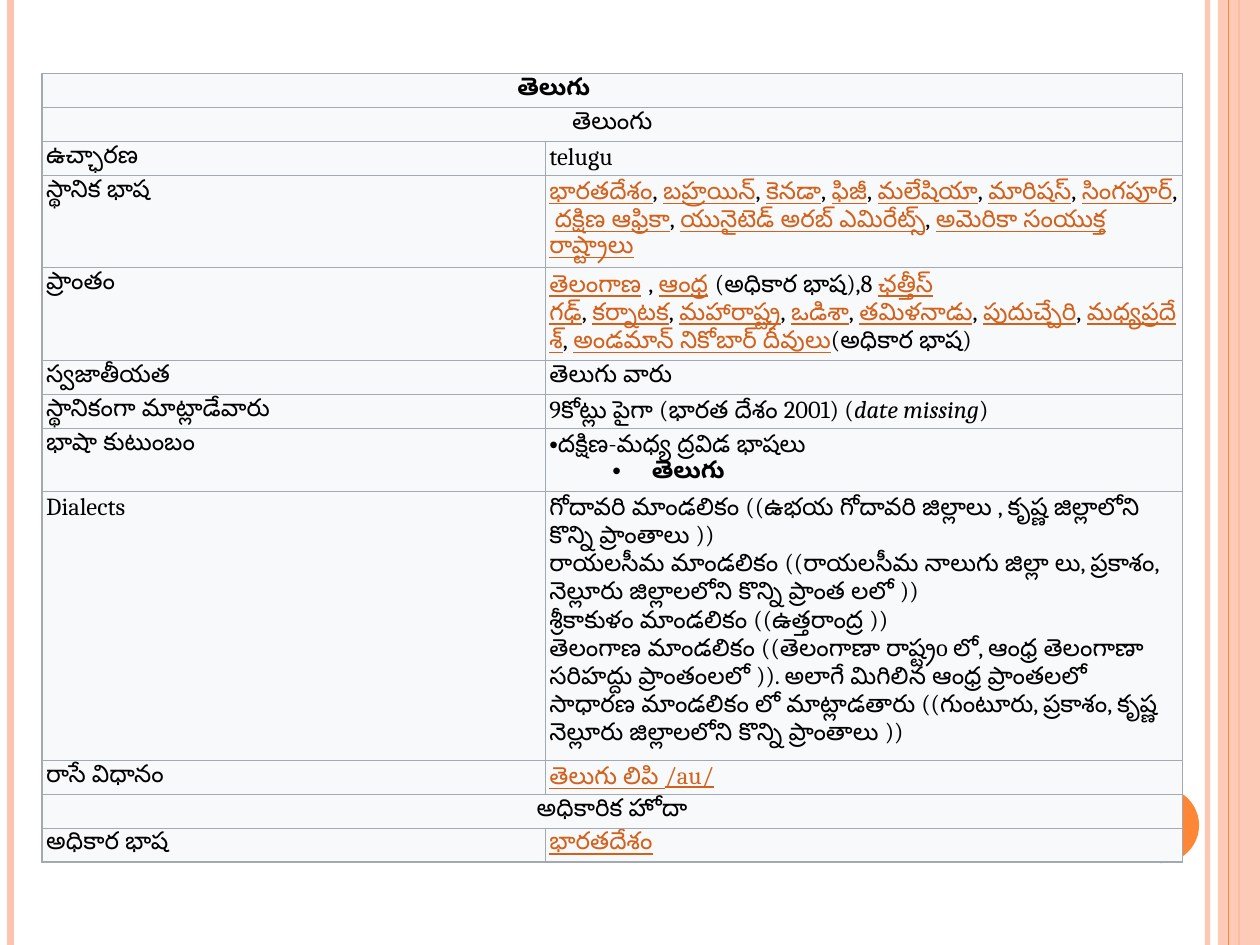
import pptx
import pptx.dml.color
import pptx.enum.shapes
import pptx.enum.text
import pptx.oxml
import pptx.oxml.ns
import pptx.util
from lxml import etree

Pt = pptx.util.Pt
qn = pptx.oxml.ns.qn
NO_BREAK_SPACE = chr(160)


def color(value):
    return pptx.dml.color.RGBColor.from_string(value)


def add_alpha(fill_parent, percent):
    for element in fill_parent.iter(qn("a:srgbClr")):
        etree.SubElement(element, qn("a:alpha")).set("val", str(percent * 1000))


class SlideBuilder:
    font = "Cambria"
    size = 14
    text = "000000"
    link = "D2611C"
    cell_fill = "F8F9FA"
    border = "A2A9B1"
    accent = "FE8637"
    pale = "FEC3AE"

    def __init__(self, presentation):
        self.slide = presentation.slides.add_slide(presentation.slide_layouts[6])

    def vertical_line(self, x, line_color, width, alpha=100):
        line = self.slide.shapes.add_connector(
            pptx.enum.shapes.MSO_CONNECTOR.STRAIGHT, Pt(x), Pt(0), Pt(x), Pt(540))
        line.line.color.rgb = color(line_color)
        line.line.width = Pt(width)
        properties = line._element.spPr
        if alpha < 100:
            add_alpha(properties, alpha)
        etree.SubElement(properties, qn("a:effectLst"))

    def shape(self, kind, left, top, width, height, fill, alpha=100):
        shape = self.slide.shapes.add_shape(
            kind, Pt(left), Pt(top), Pt(width), Pt(height))
        shape.shadow.inherit = False
        shape.fill.solid()
        shape.fill.fore_color.rgb = color(fill)
        shape.line.fill.background()
        if alpha < 100:
            add_alpha(shape._element.spPr, alpha)

    def table(self, left, top, width, height, columns, rows):
        frame = self.slide.shapes.add_table(
            len(rows), len(columns), Pt(left), Pt(top), Pt(width), Pt(height))
        table = frame.table
        table.first_row = False
        table.horz_banding = False
        for column, column_width in zip(table.columns, columns):
            column.width = Pt(column_width)
        for row, (row_height, *_) in zip(table.rows, rows):
            row.height = Pt(row_height)
        for cell in table.iter_cells():
            self.style_cell(cell)
        for index, (_, *texts) in enumerate(rows):
            if len(texts) == 1:
                table.cell(index, 0).merge(table.cell(index, 1))
            for column, content in enumerate(texts):
                paragraphs = content if isinstance(content, list) else [content]
                self.fill_cell(table.cell(index, column), paragraphs, len(texts) == 1)
        return table

    def style_cell(self, cell):
        cell.margin_left = cell.margin_right = Pt(2.4)
        cell.margin_top = cell.margin_bottom = Pt(1.2)
        cell.fill.solid()
        cell.fill.fore_color.rgb = color(self.cell_fill)
        properties = cell._tc.tcPr
        for position, side in enumerate(("lnL", "lnR", "lnT", "lnB")):
            properties.insert(position, pptx.oxml.parse_xml(
                f'<a:{side} {pptx.oxml.ns.nsdecls("a")} w="{Pt(0.75)}"><a:solidFill>'
                f'<a:srgbClr val="{self.border}"/></a:solidFill></a:{side}>'))

    def fill_cell(self, cell, paragraphs, centered):
        """|link|, _italic_ and ~ for a no-break space."""
        frame = cell.text_frame
        for index, text in enumerate(paragraphs):
            paragraph = frame.add_paragraph() if index else frame.paragraphs[0]
            paragraph.font.name = self.font
            paragraph.font.size = Pt(self.size)
            if centered:
                paragraph.alignment = pptx.enum.text.PP_ALIGN.CENTER
            for link_index, link_piece in enumerate(text.split("|")):
                is_link = link_index % 2 == 1
                for piece_index, piece in enumerate(link_piece.split("_")):
                    if not piece:
                        continue
                    run = paragraph.add_run()
                    run.text = piece.replace("~", NO_BREAK_SPACE)
                    run.font.color.rgb = color(self.link if is_link else self.text)
                    if is_link:
                        run.font.underline = True
                    if piece_index % 2:
                        run.font.italic = True

    def bullet(self, paragraph, left=0, indent=0):
        properties = paragraph._p.get_or_add_pPr()
        properties.set("marL", str(Pt(left)))
        properties.set("indent", str(Pt(indent)))
        typeface = etree.Element(qn("a:buFont"))
        typeface.set("typeface", "Arial")
        mark = etree.Element(qn("a:buChar"))
        mark.set("char", "•")
        properties.insert(0, typeface)
        properties.insert(1, mark)


def links(names):
    return ",~".join(f"|{name}|" for name in names)


COUNTRIES = ["భారతదేశం", "బహ్రయిన్", "కెనడా", "ఫిజీ", "మలేషియా", "మారిషస్", "సింగపూర్",
             "దక్షిణ ఆఫ్రికా", "యునైటెడ్ అరబ్ ఎమిరేట్స్", "అమెరికా సంయుక్త రాష్ట్రాలు"]
STATES = ["ఛత్తీస్ గఢ్", "కర్నాటక", "మహారాష్ట్ర", "ఒడిశా", "తమిళనాడు", "పుదుచ్చేరి",
          "మధ్యప్రదేశ్", "అండమాన్ నికోబార్ దీవులు"]
DIALECTS = [
    "గోదావరి మాండలికం ((ఉభయ గోదావరి జిల్లాలు , కృష్ణ జిల్లాలోని కొన్ని ప్రాంతాలు ))",
    "రాయలసీమ మాండలికం ((రాయలసీమ నాలుగు జిల్లా లు, ప్రకాశం, నెల్లూరు జిల్లాలలోని "
    "కొన్ని ప్రాంత లలో ))",
    "శ్రీకాకుళం మాండలికం ((ఉత్తరాంద్ర ))",
    "తెలంగాణ మాండలికం ((తెలంగాణా రాష్ట్రo లో, ఆంధ్ర తెలంగాణా సరిహద్దు ప్రాంతంలలో )). "
    "అలాగే మిగిలిన ఆంధ్ర ప్రాంతలలో సాధారణ మాండలికం లో మాట్లాడతారు "
    "((గుంటూరు, ప్రకాశం, కృష్ణ నెల్లూరు జిల్లాలలోని కొన్ని ప్రాంతాలు ))",
]
SINGLE, TRIPLE = 19.4, 52.9
# Row height, then one text for a merged row or two for a pair
ROWS = [
    (SINGLE, "తెలుగు"),
    (SINGLE, "తెలుంగు"),
    (SINGLE, "ఉచ్ఛారణ", "telugu"),
    (TRIPLE, "స్థానిక భాష", links(COUNTRIES)),
    (TRIPLE, "ప్రాంతం",
     "|తెలంగాణ|~,~|ఆంధ్ర|~(అధికార భాష),8~" + links(STATES) + "(అధికార భాష)"),
    (SINGLE, "స్వజాతీయత", "తెలుగు వారు"),
    (SINGLE, "స్థానికంగా మాట్లాడేవారు", "9కోట్లు పైగా (భారత దేశం 2001)~(_date missing_)"),
    (36, "భాషా కుటుంబం", ["దక్షిణ-మధ్య ద్రవిడ భాషలు", "తెలుగు"]),
    (153.7, "Dialects", DIALECTS),
    (SINGLE, "రాసే విధానం", "|తెలుగు లిపి /au/|"),
    (SINGLE, "అధికారిక హోదా"),
    (SINGLE, "అధికార భాష", "|భారతదేశం|"),
]


def main():
    presentation = pptx.Presentation()
    presentation.slide_width = Pt(720)
    presentation.slide_height = Pt(540)
    builder = SlideBuilder(presentation)
    shapes = pptx.enum.shapes.MSO_SHAPE

    # Side stripes and disc
    builder.vertical_line(690, builder.pale, 3, alpha=93)
    builder.vertical_line(6, builder.pale, 4.5)
    builder.vertical_line(708, builder.accent, 1.5)
    builder.shape(shapes.RECTANGLE, 696, 0, 24, 540, builder.pale, alpha=87)
    builder.vertical_line(702, builder.accent, 0.75)
    builder.shape(shapes.OVAL, 642, 450, 43.2, 43.2, builder.accent)

    # Language table
    table = builder.table(24, 42, 651.6, 450, [287.6, 364], ROWS)

    # Bold title, centred left of the middle
    title = table.cell(0, 0)
    title.margin_right = Pt(69)
    title.text_frame.paragraphs[0].font.bold = True

    # Language family tree
    family, language = table.cell(7, 1).text_frame.paragraphs
    builder.bullet(family)
    language.level = 1
    language.font.bold = True
    builder.bullet(language, 58.5, -22.5)

    presentation.save("out.pptx")


if __name__ == "__main__":
    main()
